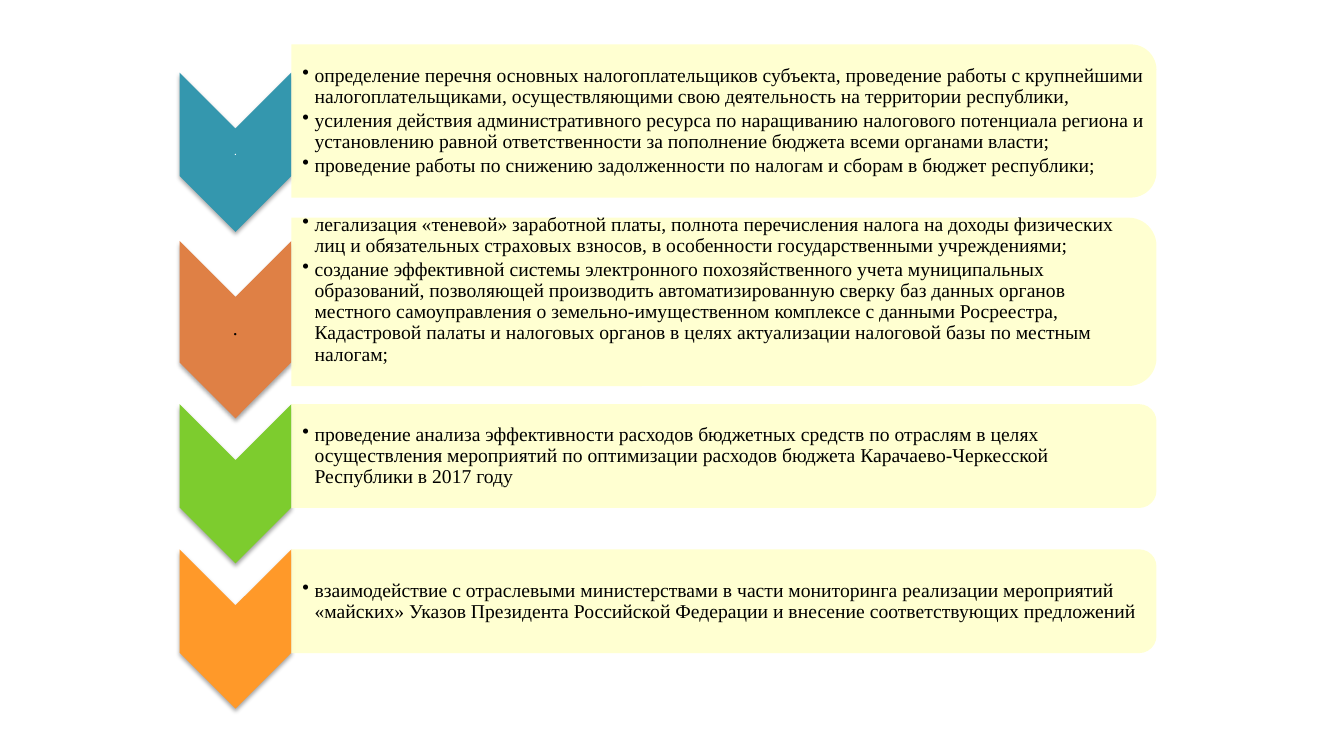
from dataclasses import dataclass

from lxml import etree
from pptx import Presentation
from pptx import util as u
from pptx.dml.color import RGBColor
from pptx.enum import shapes, text
from pptx.oxml.ns import qn

PX = 9144  # one hundredth of an inch


@dataclass(frozen=True)
class Theme:
    teal: str = "3497AE"
    rust: str = "DF8045"
    green: str = "7DCC2E"
    amber: str = "FF9929"
    cream: str = "FFFFCC"
    black: str = "000000"
    white: str = "FFFFFF"
    serif: str = "Times New Roman"
    sans: str = "Calibri"
    body: int = 14
    small: int = 8


T = Theme()
LEFT, ARROW, PANEL = 178, 111, 858
GAP = 12  # hanging indent of the bullets

# Each row: arrow top and height, panel top and height, text shift, colour, dot style, items
ROWS = [
    (72, 158, 44, 152, 0, T.teal, (T.sans, T.small, T.white), [
        "определение перечня основных налогоплательщиков субъекта, проведение работы с крупнейшими "
        "налогоплательщиками, осуществляющими свою деятельность на территории республики,",
        "усиления действия административного ресурса по наращиванию налогового потенциала региона и "
        "установлению равной ответственности за пополнение бюджета всеми органами власти;",
        "проведение работы по снижению задолженности по налогам и сборам в бюджет республики;",
    ]),
    (239, 176, 216, 167, -12, T.rust, (T.serif, T.body, T.black), [
        "легализация «теневой» заработной платы, полнота перечисления налога на доходы физических "
        "лиц и обязательных страховых взносов, в особенности государственными учреждениями;",
        "создание эффективной системы электронного похозяйственного учета муниципальных "
        "образований, позволяющей производить автоматизированную сверку баз данных органов "
        "местного самоуправления о земельно-имущественном комплексе с данными Росреестра, "
        "Кадастровой палаты и налоговых органов в целях актуализации налоговой базы по местным "
        "налогам;",
    ]),
    (401, 158, 401, 103, 0, T.green, None, [
        "проведение анализа эффективности расходов бюджетных средств по отраслям в целях "
        "осуществления мероприятий по оптимизации расходов бюджета Карачаево-Черкесской "
        "Республики в 2017 году",
    ]),
    (545, 158, 545, 103, 0, T.amber, None, [
        "взаимодействие с отраслевыми министерствами в части мониторинга реализации мероприятий "
        "«майских» Указов Президента Российской Федерации и внесение соответствующих предложений",
    ]),
]


def px(n):
    return u.Emu(round(n * PX))


def turned(slide, kind, box, color):
    """Add a shape turned by 90 degrees so that it fills the given box."""
    x, y, w, h = box
    shape = slide.shapes.add_shape(
        kind, px(x + (w - h) / 2), px(y + (h - w) / 2), px(h), px(w))
    shape.rotation = 90
    shape.fill.solid()
    shape.fill.fore_color.rgb = RGBColor.from_string(color)
    shape.line.fill.background()
    shape.shadow.inherit = False
    return shape


def alpha(node, share):
    etree.SubElement(node, qn("a:alpha"), val=str(share * 1000))


def label(slide, box, inset):
    frame = slide.shapes.add_textbox(*map(px, box)).text_frame
    frame.word_wrap = True
    frame.vertical_anchor = text.MSO_ANCHOR.MIDDLE
    frame.margin_left = px(inset)
    frame.margin_top = frame.margin_right = frame.margin_bottom = px(1)
    return frame


def write(para, words, font, size, color):
    para.line_spacing = 0.9
    run = para.add_run()
    run.text = words
    run.font.name = font
    run.font.size = u.Pt(size)
    run.font.color.rgb = RGBColor.from_string(color)


def arrow(slide, box, color, dot):
    x, y, w, h = box
    shape = turned(slide, shapes.MSO_SHAPE.CHEVRON, box, color)
    # Soft shadow below the arrow
    effects = shape._element.spPr.find(qn("a:effectLst"))
    shade = etree.SubElement(
        effects, qn("a:outerShdw"), blurRad=str(u.Pt(3.1)),
        dist=str(u.Pt(1.8)), dir="5400000", rotWithShape="0")
    alpha(etree.SubElement(shade, qn("a:srgbClr"), val=T.black), 35)
    if dot:
        para = label(slide, (x, y + w / 2, w, h - w), 1).paragraphs[0]
        para.alignment = text.PP_ALIGN.CENTER
        write(para, ".", *dot)


def panel(slide, box, shift, items):
    x, y, w, h = box
    shape = turned(slide, shapes.MSO_SHAPE.ROUND_2_SAME_RECTANGLE, box, T.cream)
    alpha(shape._element.spPr.find(qn("a:solidFill"))[0], 90)
    # Bulleted text inside the panel
    edge = h / 20
    frame = label(slide, (x, y + edge + shift, w - edge, h - 2 * edge), 11)
    for i, item in enumerate(items):
        para = frame.add_paragraph() if i else frame.paragraphs[0]
        props = para._p.get_or_add_pPr()
        props.set("marL", str(px(GAP)))
        props.set("indent", str(px(-GAP)))
        etree.SubElement(props, qn("a:buChar"), char="•")
        para.space_after = u.Pt(2)
        write(para, item, T.serif, T.body, T.black)


def main():
    deck = Presentation()
    deck.slide_width, deck.slide_height = px(1333), px(750)
    slide = deck.slides.add_slide(deck.slide_layouts[6])
    for top, high, y, h, shift, color, dot, items in ROWS:
        arrow(slide, (LEFT, top, ARROW, high), color, dot)
        panel(slide, (LEFT + ARROW, y, PANEL, h), shift, items)
    deck.save("out.pptx")


if __name__ == "__main__":
    main()
